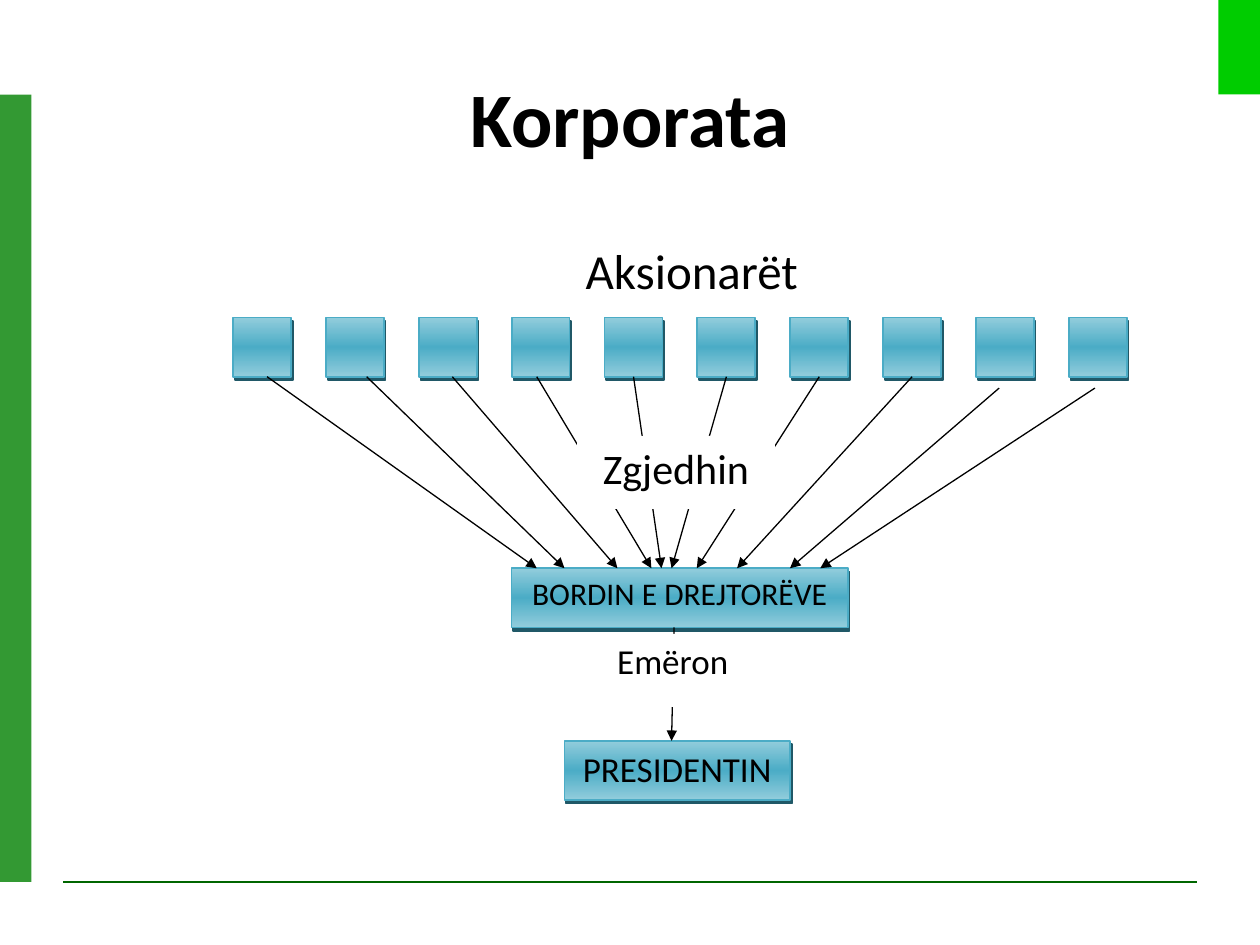
from copy import deepcopy

from lxml import etree
from pptx import Presentation
from pptx import util as u
from pptx.dml.color import RGBColor
from pptx.enum import shapes, text
from pptx.oxml.ns import qn

COLS, ROWS = 100, 75
TEAL, PALE, DARK, BLACK, WHITE = "4BACC6", "92CDDC", "205867", "000000", "FFFFFF"
BOTTOM = 2


def color(value):
    return RGBColor.from_string(value)


class Chart:
    """Draws on one slide; lengths are columns and rows of a 100 by 75 grid."""

    font = {"name": "Calibri", "bold": False}

    def __init__(self, prs):
        self.col = prs.slide_width / COLS
        self.row = prs.slide_height / ROWS
        self.s = prs.slides.add_slide(prs.slide_layouts[5])

    def at(self, x, y):
        return u.Emu(round(x * self.col)), u.Emu(round(y * self.row))

    def put_text(self, tf, words, size, after=10, **changes):
        tf.word_wrap = True
        p = tf.paragraphs[0]
        p.alignment = text.PP_ALIGN.CENTER
        p.space_after = u.Pt(after)
        r = p.add_run()
        r.text = words
        for name, value in {**self.font, "size": u.Pt(size), **changes}.items():
            setattr(r.font, name, value)
        r.font.color.rgb = color(BLACK)

    def title(self, words, x, y, w, h):
        sp = self.s.shapes.title
        sp.left, sp.top = self.at(x, y)
        sp.width, sp.height = self.at(w, h)
        sp.text_frame.vertical_anchor = text.MSO_ANCHOR.MIDDLE
        self.put_text(sp.text_frame, words, 44, after=0, bold=True)

    def panel(self, x, y, w, h, fill, words=None, size=None):
        """Plain rectangle without an outline."""
        sp = self.s.shapes.add_shape(shapes.MSO_SHAPE.RECTANGLE,
                                     *self.at(x, y), *self.at(w, h))
        sp.shadow.inherit = False
        sp.fill.solid()
        sp.fill.fore_color.rgb = color(fill)
        sp.line.fill.background()
        sp.text_frame.vertical_anchor = text.MSO_ANCHOR.TOP
        if words:
            self.put_text(sp.text_frame, words, size)
        return sp

    def box(self, x, y, w, h, words=None, size=None):
        """Teal gradient rectangle with a hard shadow."""
        sp = self.panel(x, y, w, h, TEAL, words, size)
        sp.line.color.rgb = color(TEAL)
        sp.line.width = u.Pt(1)
        sp.fill.gradient()
        sp.fill.gradient_angle = 90
        stops = sp._element.spPr.find(".//" + qn("a:gsLst"))
        stops.insert(1, deepcopy(stops[0]))
        for stop, (place, shade) in zip(sp.fill.gradient_stops,
                                        [(0, PALE), (0.5, TEAL), (1, PALE)]):
            stop.position = place
            stop.color.rgb = color(shade)
        effects = sp._element.spPr.find(qn("a:effectLst"))
        shadow = etree.SubElement(effects, qn("a:outerShdw"), blurRad="0",
                                  dist=str(u.Pt(2.2)), dir=str(63 * 60000),
                                  algn="ctr", rotWithShape="0")
        etree.SubElement(shadow, qn("a:srgbClr"), val=DARK)
        return sp

    def label(self, x, y, w, h, words, size):
        sp = self.s.shapes.add_textbox(*self.at(x, y), *self.at(w, h))
        self.put_text(sp.text_frame, words, size)

    def line(self, start, end, shade=BLACK, width=0.75, arrow=True):
        cx = self.s.shapes.add_connector(shapes.MSO_CONNECTOR.STRAIGHT,
                                         *self.at(*start), *self.at(*end))
        cx.line.color.rgb = color(shade)
        cx.line.width = u.Pt(width)
        props = cx._element.spPr
        if arrow:
            etree.SubElement(props.find(qn("a:ln")), qn("a:tailEnd"), type="triangle")
        etree.SubElement(props, qn("a:effectLst"))
        return cx


def main():
    prs = Presentation()
    prs.slide_width, prs.slide_height = u.Inches(10), u.Inches(7.5)
    c = Chart(prs)

    c.line((5, 70), (95, 70), "006600", 1, arrow=False)
    c.panel(0, 7.5, 2.5, 62.5, "339933")
    c.panel(96.7, 0, 3.3, 7.5, "00CC00")
    c.title("Korporata", 5, 3, 90, 12.5)

    side, tall, owners_y, board_y, president_y = 4.6, 4.7, 25.2, 45.1, 58.8
    owners = [c.box(18.5 + 7.37 * i, owners_y, side, tall) for i in range(10)]
    c.box(40.6, board_y, 26.7, tall, "BORDIN E DREJTORËVE", 18)
    c.box(44.8, president_y, 17.9, tall, "PRESIDENTIN", 20)

    # Columns where each shareholder's arrow starts and where it meets the board
    votes = [(21.2, 42.6), (29.1, 44.8), (35.9, 49), (42.6, 51.7), (50.4, 52.5),
             (57.6, 53.3), (65.1, 55.3), (72.5, 58.5), (79.3, 62.7), (86.9, 65.1)]
    for i, (owner, (x, board_x)) in enumerate(zip(owners, votes)):
        y = owners_y + tall + (0.9 if i > 7 else 0)
        arrow = c.line((x, y), (board_x, board_y))
        if 4 <= i <= 7:  # these start at the middle of the square's side
            arrow.begin_connect(owner, BOTTOM)
    c.line((53.5, board_y + tall), (53.3, president_y))

    c.panel(45.8, 34.6, 15.7, 5.8, WHITE, "Zgjedhin", 24)
    c.panel(44.1, 50.3, 18.6, 5.8, WHITE, "Emëron", 20)
    c.label(44.8, 18.6, 20.2, 5.8, "Aksionarët", 28)

    prs.save("out.pptx")


if __name__ == "__main__":
    main()
